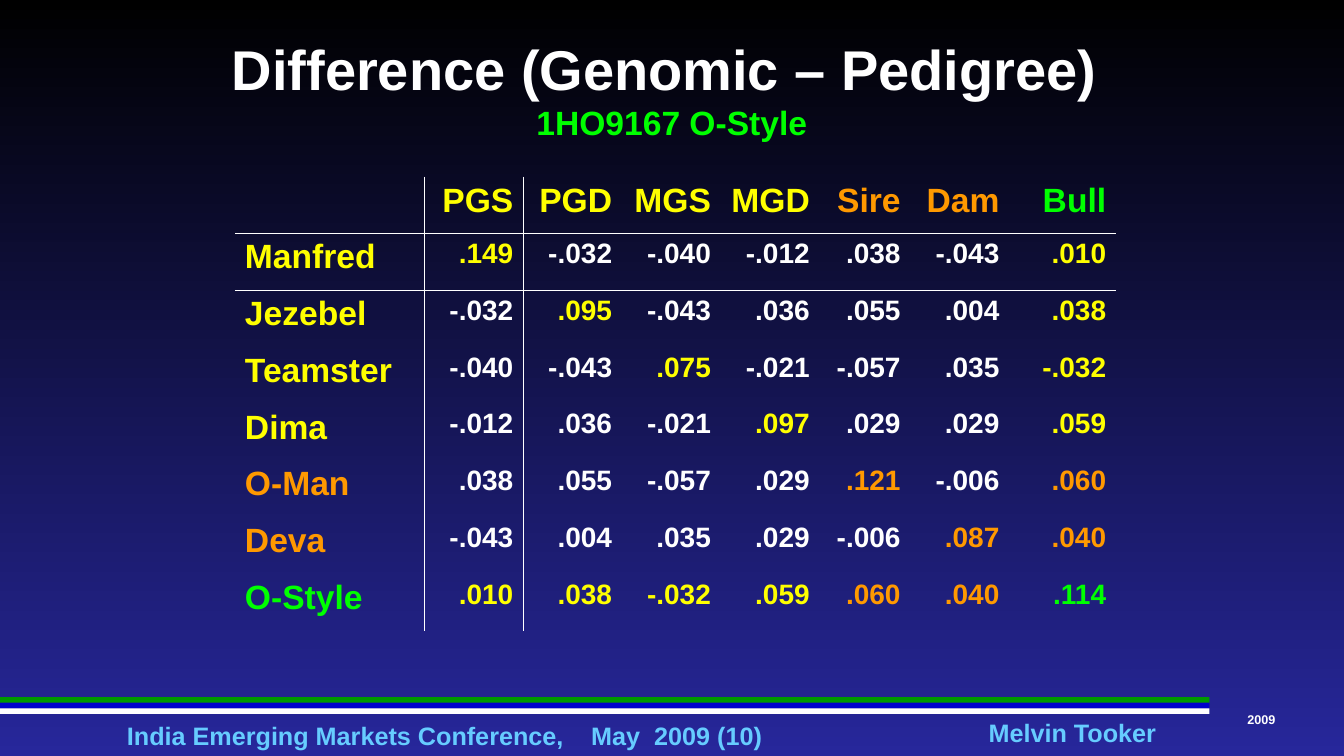
from lxml import etree
from pptx import Presentation
from pptx import util as u
from pptx.dml.color import RGBColor
from pptx.enum import shapes, text
from pptx.oxml import ns

YELLOW, ORANGE, GREEN = "FFFF00", "FF9900", "00FF00"
WHITE, SKY = "FFFFFF", "66CCFF"
LEFT, MID, RIGHT = text.PP_ALIGN.LEFT, text.PP_ALIGN.CENTER, text.PP_ALIGN.RIGHT
NO_GRID = "{2D5ABB26-0587-4C30-8999-92F81FD0307C}"

HUES = [YELLOW] * 4 + [ORANGE] * 2 + [GREEN]
HEADS = ["PGS", "PGD", "MGS", "MGD", "Sire", "Dam", "Bull"]
NAMES = ["Manfred", "Jezebel", "Teamster", "Dima", "O-Man", "Deva", "O-Style"]
GAPS = [
    [".149", "-.032", "-.040", "-.012", ".038", "-.043", ".010"],
    ["-.032", ".095", "-.043", ".036", ".055", ".004", ".038"],
    ["-.040", "-.043", ".075", "-.021", "-.057", ".035", "-.032"],
    ["-.012", ".036", "-.021", ".097", ".029", ".029", ".059"],
    [".038", ".055", "-.057", ".029", ".121", "-.006", ".060"],
    ["-.043", ".004", ".035", ".029", "-.006", ".087", ".040"],
    [".010", ".038", "-.032", ".059", ".060", ".040", ".114"],
]
WIDTHS = [4.78, 2.49, 2.49, 2.49, 2.49, 2.29, 2.49, 2.69]
ROW = 1.43


def rgb(code):
    return RGBColor.from_string(code)


def box(left, top, width, height):
    return [u.Cm(n) for n in (left, top, width, height)]


def write(para, words, size=18, color=WHITE, align=LEFT):
    para.alignment = align
    run = para.add_run()
    run.text = words
    font = run.font
    font.name, font.size, font.bold = "Arial", u.Pt(size), True
    font.color.rgb = rgb(color)


def paint(slide):
    """Fill the background from black at the top to blue at the bottom."""
    fill = slide.background.fill
    fill.gradient()
    fill.gradient_angle = 270
    for stop, place, code in zip(fill.gradient_stops, (0, 1), ("000000", "27279B")):
        stop.position = place
        stop.color.rgb = rgb(code)


def bar(slide, top, color):
    shape = slide.shapes.add_shape(shapes.MSO_SHAPE.RECTANGLE, *box(0, top, 30.48, 0.14))
    shape.shadow.inherit = False
    shape.fill.solid()
    shape.fill.fore_color.rgb = rgb(color)
    shape.line.fill.background()


def label(slide, place, words, wrap=True, tab=None, **style):
    frame = slide.shapes.add_textbox(*box(*place)).text_frame
    frame.margin_left = frame.margin_right = frame.margin_top = frame.margin_bottom = 0
    frame.word_wrap = wrap
    frame.vertical_anchor = text.MSO_ANCHOR.MIDDLE
    para = frame.paragraphs[0]
    if tab:
        tabs = etree.SubElement(para._p.get_or_add_pPr(), ns.qn("a:tabLst"))
        etree.SubElement(tabs, ns.qn("a:tab"), pos=str(u.Cm(tab)), algn="l")
    write(para, words, **style)


def head(slide):
    title = slide.shapes.title
    title.left, title.top, title.width, title.height = box(0.84, 0.64, 32.18, 3.18)
    frame = title.text_frame
    frame.auto_size = text.MSO_AUTO_SIZE.NONE
    frame.vertical_anchor = text.MSO_ANCHOR.MIDDLE
    para = frame.paragraphs[0]
    write(para, "Difference (Genomic – Pedigree) ", size=40, align=MID)
    para.add_line_break()
    write(para, "1HO9167 O-Style", size=24, color=GREEN, align=MID)


def edge(cell, side):
    line = etree.SubElement(cell._tc.get_or_add_tcPr(), ns.qn("a:ln" + side), w=str(u.Pt(1)))
    fill = etree.SubElement(line, ns.qn("a:solidFill"))
    etree.SubElement(fill, ns.qn("a:srgbClr"), val=WHITE)


def hue(row, col):
    """Colour the diagonal and the bull's own row and column; the rest is white."""
    last = len(HUES) - 1
    return HUES[min(row, col)] if row == col or last in (row, col) else WHITE


def grid(slide):
    rows, cols = len(NAMES) + 1, len(WIDTHS)
    place = box(5.92, 4.45, sum(WIDTHS), ROW * rows)
    table = slide.shapes.add_table(rows, cols, *place).table
    table.first_row = table.horz_banding = False
    table._tbl.tblPr.find(ns.qn("a:tableStyleId")).text = NO_GRID
    for col, width in zip(table.columns, WIDTHS):
        col.width = u.Cm(width)
    for r in range(rows):
        table.rows[r].height = u.Cm(ROW)
        for c in range(cols):
            cell = table.cell(r, c)
            sides = {"L": c == 1, "R": c == 0, "T": r == 1, "B": r == 0}
            for side, drawn in sides.items():
                if drawn:
                    edge(cell, side)
            cell.fill.background()
            para = cell.text_frame.paragraphs[0]
            if r and c:
                write(para, GAPS[r - 1][c - 1], size=20, color=hue(r - 1, c - 1), align=RIGHT)
            elif r:
                write(para, NAMES[r - 1], size=24, color=HUES[r - 1])
            elif c:
                write(para, HEADS[c - 1], size=24, color=HUES[c - 1], align=RIGHT)


def main():
    deck = Presentation()
    deck.slide_width, deck.slide_height = u.Cm(33.87), u.Cm(19.05)
    slide = deck.slides.add_slide(deck.slide_layouts[5])
    paint(slide)
    label(slide, (3.2, 18.16, 19.94, 0.76),
          "India Emerging Markets Conference,\tMay  2009 (10)", tab=11.7, color=SKY)
    label(slide, (24.89, 18.08, 4.27, 0.76), "Melvin Tooker", wrap=False, color=SKY, align=MID)
    label(slide, (31.32, 17.93, 0.94, 0.38), "2009", size=9, align=MID)
    for i, color in enumerate(("009900", "0000CC", WHITE)):
        bar(slide, 17.57 + 0.14 * i, color)
    head(slide)
    grid(slide)
    deck.save("out.pptx")


if __name__ == "__main__":
    main()
